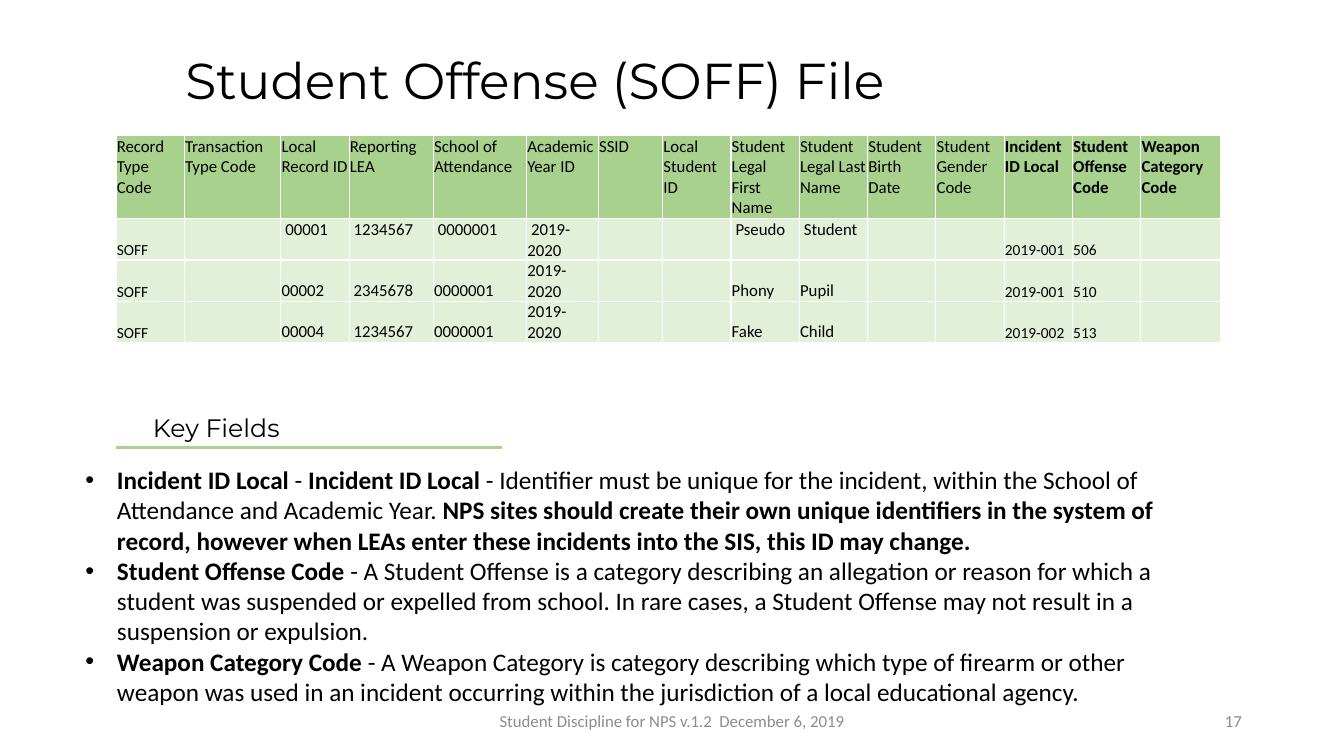
from dataclasses import dataclass

from lxml.etree import SubElement
from pptx import Presentation
from pptx.dml.color import RGBColor
from pptx.enum.shapes import MSO_CONNECTOR
from pptx.enum.text import MSO_ANCHOR, PP_ALIGN
from pptx.oxml import parse_xml
from pptx.oxml.ns import nsdecls, qn
from pptx.util import Pt


@dataclass(frozen=True)
class Theme:
    heading_font: str = "Montserrat"
    body_font: str = "Calibri"
    ink: str = "000000"
    muted: str = "8C8C8C"
    accent: str = "A9D18E"
    pale: str = "E2F0D9"
    border: str = "FFFFFF"
    title_size: int = 36
    body_size: int = 18
    small_size: int = 12
    code_size: int = 11


THEME = Theme()

TITLE = "Student Offense (SOFF) File"
KEY_HEADING = "Key Fields"
FOOTER = "Student Discipline for NPS v.1.2  December 6, 2019"
PAGE_NUMBER = "17"

# Column name and width in points
COLUMNS = [
    ("Record Type Code", 48.8),
    ("Transaction Type Code", 69),
    ("Local Record ID", 48.8),
    ("Reporting LEA", 60.2),
    ("School of Attendance", 66.6),
    ("Academic Year ID", 51.2),
    ("SSID", 46),
    ("Local Student ID", 48.8),
    ("Student Legal First Name", 48.8),
    ("Student Legal Last Name", 48.8),
    ("Student Birth Date", 48.8),
    ("Student Gender Code", 48.8),
    ("Incident ID Local", 48.8),
    ("Student Offense Code", 48.8),
    ("Weapon Category Code", 57),
]
RECORDS = [
    ("SOFF", "", " 00001", " 1234567", " 0000001", " 2019-2020", "", "",
     " Pseudo", " Student", "", "", "2019-001", "506", ""),
    ("SOFF", "", "00002", " 2345678", "0000001", "2019-2020", "", "",
     "Phony", "Pupil", "", "", "2019-001", "510", ""),
    ("SOFF", "", "00004", " 1234567", "0000001", "2019-2020", "", "",
     "Fake", "Child", "", "", "2019-002", "513", ""),
]
FIRST_KEY_COLUMN = 12
HEADER_HEIGHT, RECORD_HEIGHT = 59.5, 29.4

# Each bullet is a list of (text, bold) runs
KEY_FIELDS = [
    [("Incident ID Local ", True), ("- ", False), ("Incident ID Local ", True),
     ("- Identifier must be unique for the incident, within the School of "
      "Attendance and Academic Year. ", False),
     ("NPS sites should create their own unique identifiers in the system of "
      "record, however when LEAs enter these incidents into the SIS, this ID "
      "may change.", True)],
    [("Student Offense Code ", True),
     ("- A Student Offense is a category describing an allegation or reason "
      "for which a student was suspended or expelled from school. In rare "
      "cases, a Student Offense may not result in a suspension or expulsion.",
      False)],
    [("Weapon Category Code ", True),
     ("- A Weapon Category is category describing which type of firearm or "
      "other weapon was used in an incident occurring within the jurisdiction "
      "of a local educational agency.", False)],
]

LEFT = 82.8
RULE_TOP, RULE_RIGHT = 319.7, 358.6
BULLET_INDENT = 22.5


def add_run(para, text, size, font=THEME.body_font, color=THEME.ink, bold=False):
    span = para.add_run()
    span.text = text
    span.font.size = Pt(size)
    span.font.name = font
    span.font.bold = bold
    span.font.color.rgb = RGBColor.from_string(color)


def add_box(page, left, top, width, height, anchor=MSO_ANCHOR.TOP):
    box = page.shapes.add_textbox(Pt(left), Pt(top), Pt(width), Pt(height))
    frame = box.text_frame
    frame.word_wrap = True
    frame.vertical_anchor = anchor
    return frame


def style_cell(cell, fill):
    """Set the fill, tight margins and a border on all four sides."""
    cell.fill.solid()
    cell.fill.fore_color.rgb = RGBColor.from_string(fill)
    cell.margin_left = cell.margin_right = cell.margin_top = Pt(0.6)
    cell.margin_bottom = 0
    properties = cell._tc.get_or_add_tcPr()
    for position, side in enumerate(("lnL", "lnR", "lnT", "lnB")):
        properties.insert(position, parse_xml(
            f'<a:{side} {nsdecls("a")} w="{Pt(1)}"><a:solidFill>'
            f'<a:srgbClr val="{THEME.border}"/></a:solidFill></a:{side}>'))


def add_offense_table(page):
    names, widths = zip(*COLUMNS)
    heights = [HEADER_HEIGHT] + [RECORD_HEIGHT] * len(RECORDS)
    table = page.shapes.add_table(
        len(heights), len(names), Pt(LEFT), Pt(96.8),
        Pt(sum(widths)), Pt(sum(heights))).table
    table.first_row = table.horz_banding = False
    for column, width in zip(table.columns, widths):
        column.width = Pt(width)
    for row, height in zip(table.rows, heights):
        row.height = Pt(height)

    for row, texts in enumerate([names, *RECORDS]):
        for column, text in enumerate(texts):
            cell = table.cell(row, column)
            header = row == 0
            key = column >= FIRST_KEY_COLUMN
            code = not header and (key or column == 0)
            style_cell(cell, THEME.accent if header else THEME.pale)
            low = code or row > 1
            cell.vertical_anchor = MSO_ANCHOR.BOTTOM if low else MSO_ANCHOR.TOP
            if text:
                add_run(cell.text_frame.paragraphs[0], text,
                        THEME.code_size if code else THEME.small_size,
                        bold=header and key)


def add_key_fields(page):
    frame = add_box(page, 54, 328.3, 780.5, 269.3)
    for number, runs in enumerate(KEY_FIELDS):
        para = frame.add_paragraph() if number else frame.paragraphs[0]
        properties = para._p.get_or_add_pPr()
        properties.set("marL", str(Pt(BULLET_INDENT)))
        properties.set("indent", str(-Pt(BULLET_INDENT)))
        SubElement(properties, qn("a:buFont"), typeface="Arial")
        SubElement(properties, qn("a:buChar"), char="•")
        for text, bold in runs:
            add_run(para, text, THEME.body_size, bold=bold)


def add_key_heading(page):
    frame = add_box(page, 102.2, 290.9, 430.6, 28.8)
    add_run(frame.paragraphs[0], KEY_HEADING, THEME.body_size, THEME.heading_font)
    rule = page.shapes.add_connector(
        MSO_CONNECTOR.STRAIGHT, Pt(LEFT), Pt(RULE_TOP), Pt(RULE_RIGHT), Pt(RULE_TOP))
    rule.line.color.rgb = RGBColor.from_string(THEME.accent)
    rule.line.width = Pt(2.25)
    SubElement(rule._element.spPr, qn("a:effectLst"))


def add_footer(page):
    for text, left, width, align in (
            (FOOTER, 318.2, 324, PP_ALIGN.CENTER),
            (PAGE_NUMBER, 678.2, 216, PP_ALIGN.RIGHT)):
        para = add_box(page, left, 500.4, width, 28.8, MSO_ANCHOR.MIDDLE).paragraphs[0]
        para.alignment = align
        add_run(para, text, THEME.small_size, color=THEME.muted)


def main():
    deck = Presentation()
    deck.slide_width, deck.slide_height = Pt(960), Pt(540)
    page = deck.slides.add_slide(deck.slide_layouts[6])
    title = add_box(page, 125.3, 22.3, 571.7, 74.2, MSO_ANCHOR.MIDDLE).paragraphs[0]
    title.line_spacing = 0.9
    add_run(title, TITLE, THEME.title_size, THEME.heading_font)
    add_offense_table(page)
    add_key_fields(page)
    add_key_heading(page)
    add_footer(page)
    deck.save("out.pptx")


if __name__ == "__main__":
    main()
